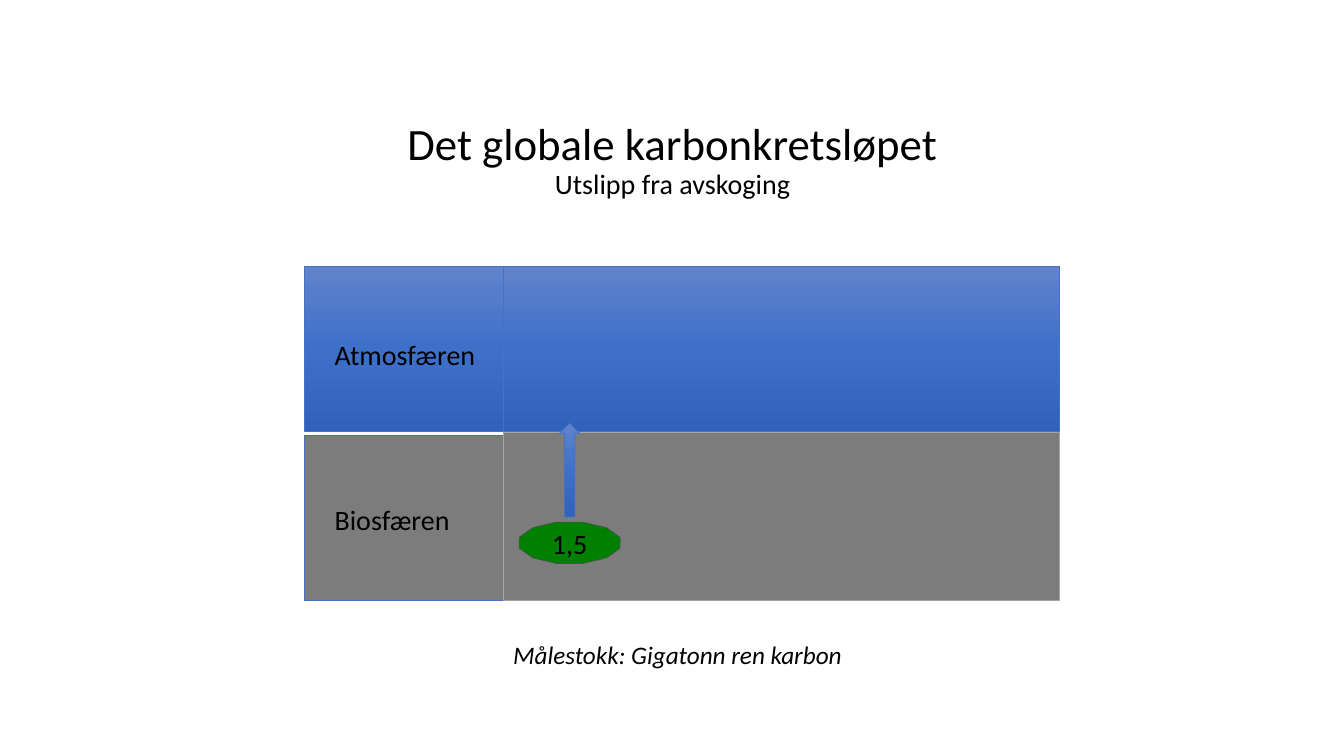
from copy import deepcopy

from pptx import Presentation
from pptx.dml.color import RGBColor
from pptx.enum.shapes import MSO_SHAPE
from pptx.enum.text import MSO_ANCHOR, PP_ALIGN
from pptx.oxml.ns import qn
from pptx.util import Inches, Pt

RECTANGLE, UP_ARROW, DODECAGON = (
    MSO_SHAPE.RECTANGLE, MSO_SHAPE.UP_ARROW, MSO_SHAPE.DODECAGON)
MIDDLE, BOTTOM = MSO_ANCHOR.MIDDLE, MSO_ANCHOR.BOTTOM
CENTER = PP_ALIGN.CENTER

BLACK = RGBColor(0x00, 0x00, 0x00)
GREY = RGBColor(0x7C, 0x7C, 0x7C)
LIGHT_GREY = RGBColor(0xA5, 0xA5, 0xA5)
DARK_GREY = RGBColor(0x52, 0x52, 0x52)
GREEN = RGBColor(0x00, 0x80, 0x00)
BLUE = RGBColor(0x44, 0x72, 0xC4)
SKY = (RGBColor(0x61, 0x83, 0xCB), RGBColor(0x3E, 0x70, 0xCA),
       RGBColor(0x30, 0x62, 0xBB))

FONT = {"name": "Calibri", "size": Pt(20)}
SCALE_FONT = {**FONT, "size": Pt(18), "italic": True}
TITLE_FONT = {**FONT, "size": Pt(32)}


def add_run(paragraph, text, font_format=FONT):
    run = paragraph.add_run()
    run.text = text
    for name, value in font_format.items():
        setattr(run.font, name, value)
    run.font.color.rgb = BLACK


def fill_sky(shape):
    """Give the shape an even downward gradient through the sky colours."""
    shape.fill.gradient()
    shape.fill.gradient_angle = 270
    stop_list = shape._element.spPr.find(qn("a:gradFill")).find(qn("a:gsLst"))
    stop_list.append(deepcopy(stop_list[0]))
    for index, (stop, color) in enumerate(zip(shape.fill.gradient_stops, SKY)):
        stop.position = index / (len(SKY) - 1)
        stop.color.rgb = color


def add_shape(slide, kind, box, fill, line=BLUE):
    shape = slide.shapes.add_shape(kind, *map(Inches, box))
    shape.shadow.inherit = False
    if fill is SKY:
        fill_sky(shape)
    else:
        shape.fill.solid()
        shape.fill.fore_color.rgb = fill
    shape.line.color.rgb = line
    shape.line.width = Pt(0.5)
    return shape


def add_label(slide, box, text, font_format=FONT):
    frame = slide.shapes.add_textbox(*map(Inches, box)).text_frame
    frame.word_wrap = True
    add_run(frame.paragraphs[0], text, font_format)


def add_title(slide, box):
    title = slide.shapes.title
    title.left, title.top, title.width, title.height = map(Inches, box)
    title.text_frame.vertical_anchor = BOTTOM
    paragraph = title.text_frame.paragraphs[0]
    paragraph.alignment = CENTER
    paragraph.line_spacing = 0.9
    add_run(paragraph, "Det globale karbonkretsløpet", TITLE_FONT)
    paragraph.add_line_break()
    add_run(paragraph, "Utslipp fra avskoging")


def add_spheres(slide, box):
    """Two layers, each with a name cell on the left and a wide field."""
    left, top, width, height = box
    name_width, row_height, field_height = 1.97, 1.64, 1.67
    field_left, field_width = left + name_width, width - name_width
    bottom = top + height

    # Cells
    add_shape(slide, RECTANGLE, (left, top, name_width, row_height), SKY)
    add_shape(slide, RECTANGLE,
              (left, bottom - row_height, name_width, row_height), GREY)
    add_shape(slide, RECTANGLE, (field_left, top, field_width, row_height), SKY)
    add_shape(slide, RECTANGLE,
              (field_left, bottom - field_height, field_width, field_height),
              GREY, LIGHT_GREY)

    # Layer names
    for row, name in enumerate(("Atmosfæren", "Biosfæren")):
        add_label(slide, (left + 0.2, top + 0.66 + row * row_height, 1.65, 0.44),
                  name)


def add_emission(slide, box):
    """Arrow rising from the amount released."""
    left, top, width, height = box
    arrow_width, amount_height = 0.2, 0.41
    add_shape(slide, UP_ARROW,
              (left + (width - arrow_width) / 2, top, arrow_width, 0.93), SKY)
    amount = add_shape(slide, DODECAGON,
                       (left, top + height - amount_height, width, amount_height),
                       GREEN, DARK_GREY)
    amount.text_frame.vertical_anchor = MIDDLE
    paragraph = amount.text_frame.paragraphs[0]
    paragraph.alignment = CENTER
    add_run(paragraph, "1,5")


def main():
    presentation = Presentation()
    presentation.slide_width = Inches(13.33)
    presentation.slide_height = Inches(7.5)
    slide = presentation.slides.add_slide(presentation.slide_layouts[5])

    add_title(slide, (2.42, 0.43, 8.5, 1.61))
    add_spheres(slide, (3.02, 2.64, 7.49, 3.32))
    add_emission(slide, (5.15, 4.2, 1, 1.39))
    add_label(slide, (4.99, 6.29, 6.8, 0.4), "Målestokk: Gigatonn ren karbon",
              SCALE_FONT)

    presentation.save("out.pptx")


if __name__ == "__main__":
    main()
